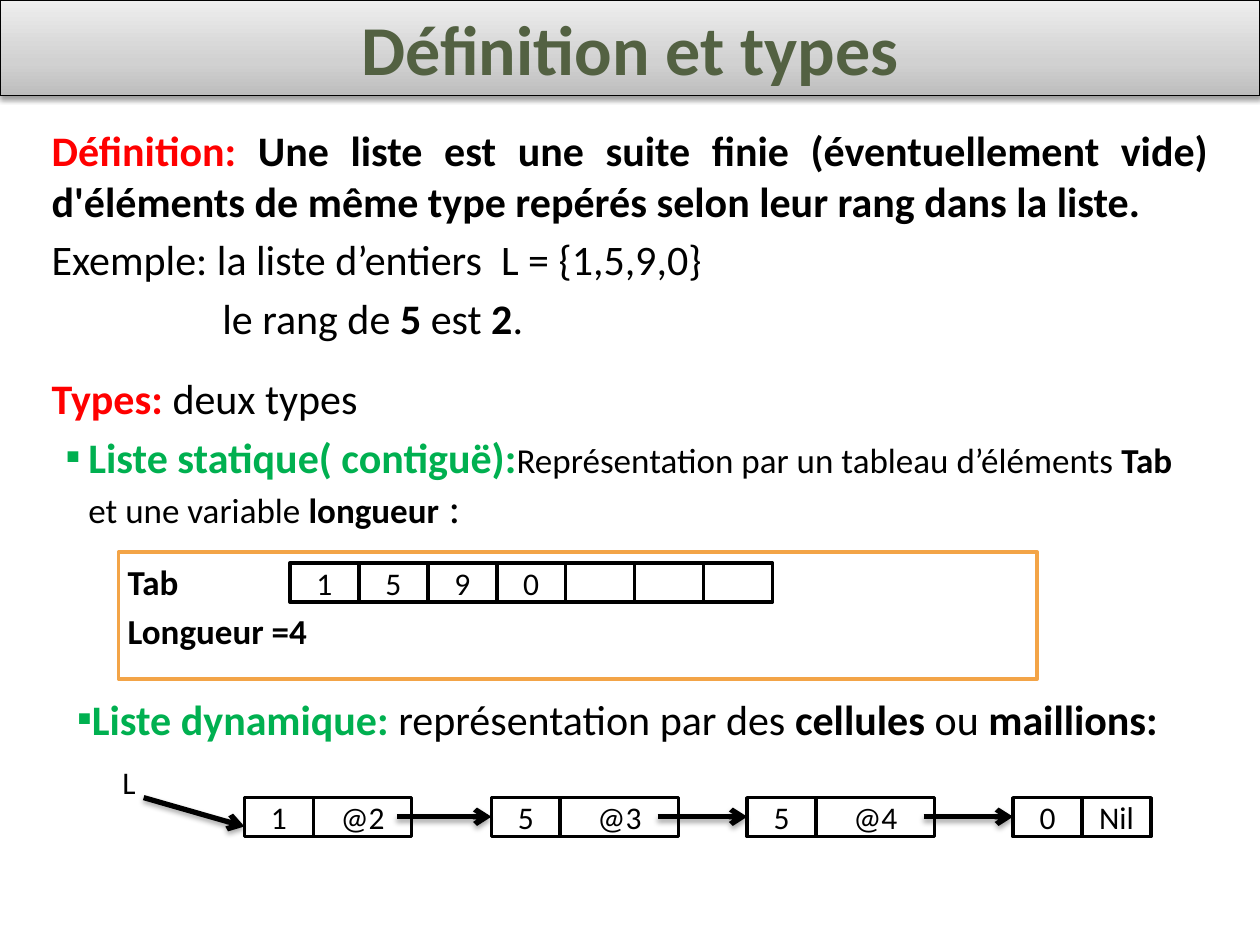
from copy import deepcopy

from lxml import etree
from pptx import Presentation
from pptx.dml.color import RGBColor
from pptx.enum import shapes, text
from pptx.oxml import ns
from pptx.util import Pt

BLACK = RGBColor(0x00, 0x00, 0x00)
WHITE = RGBColor(0xFF, 0xFF, 0xFF)
RED = RGBColor(0xFF, 0x00, 0x00)
GREEN = RGBColor(0x00, 0xB0, 0x50)
OLIVE = RGBColor(0x53, 0x61, 0x42)
ORANGE = RGBColor(0xF3, 0xA4, 0x47)
BANNER_STOPS = [
    (0, RGBColor(0xBD, 0xBD, 0xBD)),
    (0.35, RGBColor(0xD1, 0xD1, 0xD1)),
    (1, RGBColor(0xEE, 0xEE, 0xEE)),
]
FONT = "Calibri"
CELL_WIDTH, CELL_HEIGHT = 39.4, 22.3
JUSTIFY, LEFT = text.PP_ALIGN.JUSTIFY, text.PP_ALIGN.LEFT

PARAGRAPHS = [
    (dict(alignment=JUSTIFY, space_before=Pt(0)), 0, 0, None, [
        ("Définition: ", RED, True, 24),
        ("Une liste est une suite finie (éventuellement vide) d'éléments de même type "
         "repérés selon leur rang dans la liste.", BLACK, True, 24)]),
    (dict(alignment=JUSTIFY, space_before=Pt(4.8)), 0, 0, None, [
        ("Exemple: la liste d’entiers  L = {1,5,9,0}", BLACK, False, 24)]),
    (dict(alignment=JUSTIFY, space_before=Pt(4.8), space_after=Pt(12)), 97.5, 0, None, [
        ("le rang de ", BLACK, False, 24), ("5", BLACK, True, 24),
        (" est", BLACK, False, 24), (" 2", BLACK, True, 24), (".", BLACK, False, 24)]),
    (dict(alignment=LEFT, space_before=Pt(4.8)), 0, 0, None, [
        ("Types: ", RED, True, 24), ("deux types", BLACK, False, 24)]),
    (dict(alignment=LEFT, space_before=Pt(4.8), space_after=Pt(12)), 21, -13, "▪", [
        ("Liste statique( contiguë):", GREEN, True, 24),
        ("Représentation par un tableau d’éléments ", BLACK, False, 20),
        ("Tab", BLACK, True, 20), (" et une variable ", BLACK, False, 20),
        ("longueur", BLACK, True, 20), (" :", BLACK, False, 24)]),
    (dict(alignment=LEFT, space_before=Pt(4)), 43.4, 0, None, [("Tab", BLACK, True, 20)]),
    (dict(alignment=LEFT, space_before=Pt(4)), 43.4, 0, None, [
        ("Longueur =4", BLACK, True, 20)]),
    (dict(alignment=LEFT, space_before=Pt(24)), 21, -6.5, "▪", [
        ("Liste dynamique: ", GREEN, True, 24),
        ("représentation par des ", BLACK, False, 24), ("cellules", BLACK, True, 24),
        (" ou ", BLACK, False, 24), ("maillions:", BLACK, True, 24)]),
]


def apply(target, **values):
    """Set each named attribute on the target."""
    for name, value in values.items():
        setattr(target, name, value)


def place(shape, left, top, width, height):
    """Move and size a shape, in points."""
    apply(shape, left=Pt(left), top=Pt(top), width=Pt(width), height=Pt(height))


def add_span(para, wording, color, bold, size):
    """Append one formatted run."""
    span = para.add_run()
    span.text = wording
    apply(span.font, name=FONT, size=Pt(size), bold=bold)
    span.font.color.rgb = color


def add_shadow(shape, blur, distance, opacity):
    """Give a shape a soft black shadow falling downwards."""
    effects = etree.SubElement(shape._element.spPr, ns.qn("a:effectLst"))
    shadow = etree.SubElement(
        effects, ns.qn("a:outerShdw"), blurRad=str(Pt(blur)), dist=str(Pt(distance)),
        dir="5400000", rotWithShape="0")
    color = etree.SubElement(shadow, ns.qn("a:srgbClr"), val="000000")
    etree.SubElement(color, ns.qn("a:alpha"), val=str(opacity * 1000))


def build_banner(title, box):
    """Format the title placeholder as a grey gradient banner."""
    place(title, *box)
    title.fill.gradient()
    title.fill.gradient_angle = 90
    stops = title._element.spPr.find(".//" + ns.qn("a:gsLst"))
    stops.insert(1, deepcopy(stops[0]))
    for stop, (position, color) in zip(title.fill.gradient_stops, BANNER_STOPS):
        stop.position = position
        stop.color.rgb = color
    title.line.color.rgb = BLACK
    title.line.width = Pt(0.75)
    add_shadow(title, 3.1, 1.6, 38)
    apply(title.text_frame, vertical_anchor=text.MSO_ANCHOR.MIDDLE,
          auto_size=text.MSO_AUTO_SIZE.NONE)
    para = title.text_frame.paragraphs[0]
    para.alignment = text.PP_ALIGN.CENTER
    add_span(para, "Définition et types", OLIVE, True, 40)


def build_body(body, box):
    """Fill the body placeholder with the definition and the two list types."""
    place(body, *box)
    frame = body.text_frame
    apply(frame, auto_size=text.MSO_AUTO_SIZE.NONE, vertical_anchor=text.MSO_ANCHOR.TOP)
    for index, (layout, margin, indent, bullet, spans) in enumerate(PARAGRAPHS):
        para = frame.add_paragraph() if index else frame.paragraphs[0]
        properties = para._p.get_or_add_pPr()
        properties.set("marL", str(Pt(margin)))
        properties.set("indent", str(Pt(indent)))
        if bullet:
            etree.SubElement(properties, ns.qn("a:buFont"), typeface=FONT)
            etree.SubElement(properties, ns.qn("a:buChar"), char=bullet)
        else:
            etree.SubElement(properties, ns.qn("a:buNone"))
        apply(para, **layout)
        for span in spans:
            add_span(para, *span)


def add_box(parent, box, wording="", fill=WHITE, line=BLACK):
    """Add a rectangle with optional centred text, fill and outline."""
    shape = parent.shapes.add_shape(shapes.MSO_SHAPE.RECTANGLE, *map(Pt, box))
    shape.shadow.inherit = False
    if fill is None:
        shape.fill.background()
    else:
        shape.fill.solid()
        shape.fill.fore_color.rgb = fill
    if line is None:
        shape.line.fill.background()
    else:
        shape.line.color.rgb = line
        shape.line.width = Pt(2)
    if wording:
        frame = shape.text_frame
        apply(frame, margin_left=0, margin_right=0, margin_top=0, margin_bottom=0,
              vertical_anchor=text.MSO_ANCHOR.MIDDLE, word_wrap=True)
        frame.paragraphs[0].alignment = text.PP_ALIGN.CENTER
        add_span(frame.paragraphs[0], wording, BLACK, False, 18)


def add_arrow(parent, *ends):
    """Add a thick black arrow between two points."""
    arrow = parent.shapes.add_connector(shapes.MSO_CONNECTOR.STRAIGHT, *map(Pt, ends))
    arrow.line.color.rgb = BLACK
    arrow.line.width = Pt(3)
    etree.SubElement(arrow.line._get_or_add_ln(), ns.qn("a:tailEnd"), type="arrow")
    add_shadow(arrow, 3.1, 1.8, 35)


def build_array(page, box):
    """Draw the framed array with its used and free cells."""
    left, top = box[:2]
    add_box(page, box, fill=None, line=ORANGE)
    cells = page.shapes.add_group_shape()
    for index, value in enumerate(["1", "5", "9", "0", "", "", ""]):
        add_box(cells, (left + 98 + index * CELL_WIDTH, top + 6.4, CELL_WIDTH, CELL_HEIGHT),
                value)


def build_chain(page, left, top):
    """Draw the linked nodes, the head label and the arrows between them."""
    chain = page.shapes.add_group_shape()
    nodes = [(85.7, "1", "@2", 56.2), (226.8, "5", "@3", 67.7),
             (373, "5", "@4", 67.7), (524.9, "0", "Nil", CELL_WIDTH)]
    row = top + 20.2
    add_box(chain, (left, top, CELL_WIDTH, CELL_HEIGHT), "L", line=None)
    for offset, value, link, width in nodes:
        add_box(chain, (left + offset, row, CELL_WIDTH, CELL_HEIGHT), value)
        add_box(chain, (left + offset + CELL_WIDTH, row, width, CELL_HEIGHT), link)
    add_arrow(chain, left + 28.1, row, left + nodes[0][0], row + 16.5)
    for start, node in zip([172.8, 321.8, 473.8], nodes[1:]):
        add_arrow(chain, left + start, row + 10.9, left + node[0], row + 10.9)


def main():
    """Build and save the slide."""
    deck = Presentation()
    apply(deck, slide_width=Pt(720), slide_height=Pt(540))
    page = deck.slides.add_slide(deck.slide_layouts[1])
    build_body(page.placeholders[1], (22.3, 67.7, 675.4, 438.5))
    build_banner(page.shapes.title, (0, 0, 720, 54.7))
    build_array(page, (67.7, 315.4, 525, 72.7))
    build_chain(page, 54, 435.6)
    deck.save("out.pptx")


if __name__ == "__main__":
    main()
